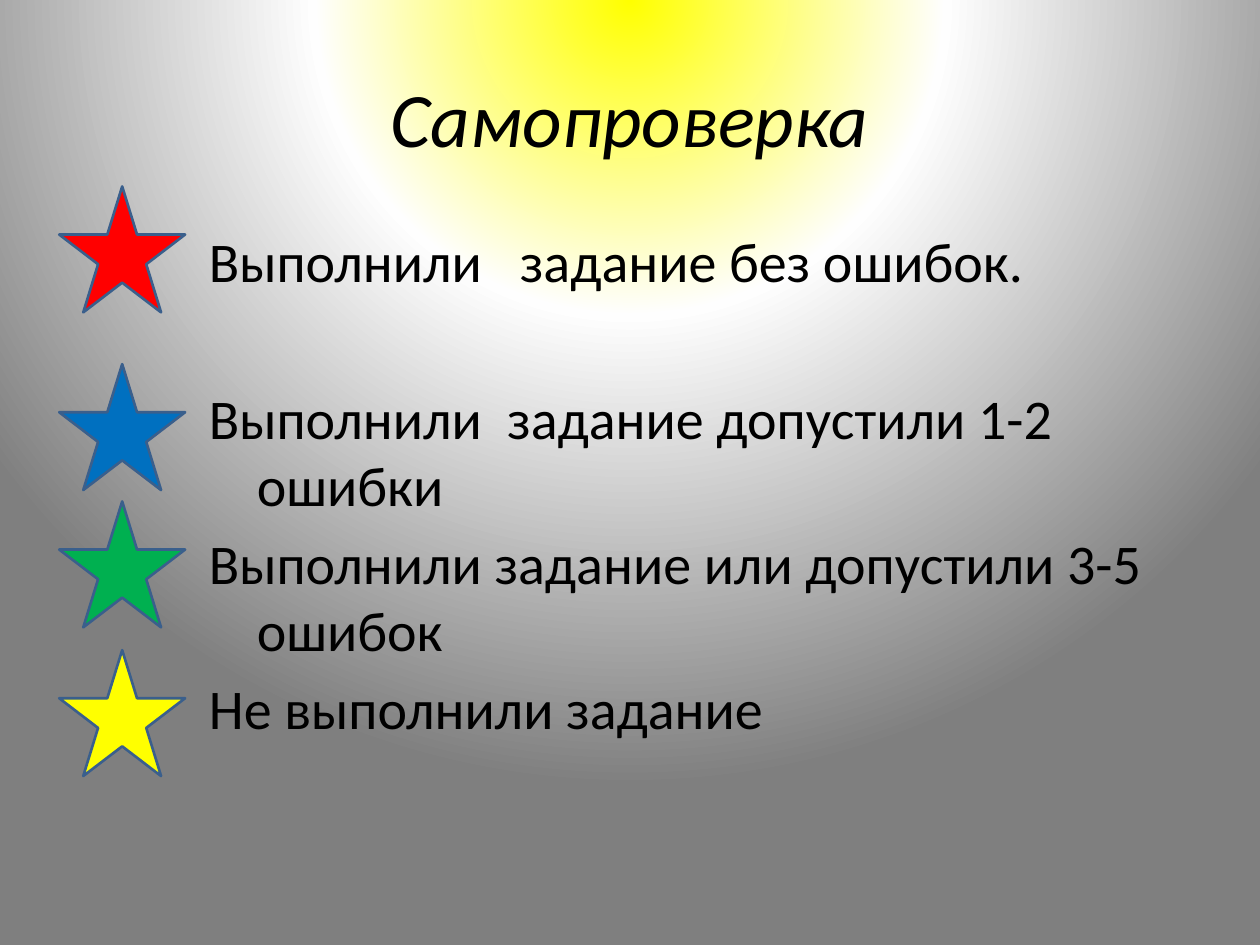
import pptx
import pptx.util
import pptx.dml.color
import pptx.enum.shapes
import pptx.enum.text
import pptx.oxml
import pptx.oxml.ns

W, H = 10, 7.5
FONT = "Calibri"
BODY_SIZE = 32
PARA_GAP = 6
EMPTY_ROW = 45  # one skipped line of body text, in points

# star top, star colour, text, extra space above the text
LEVELS = [
    (1.48, "FF0000", "Выполнили   задание без ошибок.", 0),
    (2.89, "0070C0", "Выполнили  задание допустили 1-2   ошибки", EMPTY_ROW),
    (3.98, "00B050", "Выполнили задание или допустили 3-5 ошибок", 0),
    (5.16, "FFFF00", "Не выполнили задание", 0),
]


def color(hex_text):
    return pptx.dml.color.RGBColor.from_string(hex_text)


def place(sp, box):
    sp.left, sp.top, sp.width, sp.height = map(pptx.util.Inches, box)


def write(p, text, size=BODY_SIZE, fill="000000", italic=False,
          align=pptx.enum.text.PP_ALIGN.LEFT, before=0):
    p.alignment = align
    p.space_before = pptx.util.Pt(before)
    r = p.add_run()
    r.text = text
    r.font.name = FONT
    r.font.size = pptx.util.Pt(size)
    r.font.italic = italic
    r.font.color.rgb = color(fill)


def add_background(s):
    """Circular gradient centred above the top edge."""
    stops = [(0, "FFFF00"), (40, "FEFEFE"), (100, "7F7F7F")]
    gs = "".join(f'<a:gs pos="{pos * 1000}"><a:srgbClr val="{c}"/></a:gs>'
                 for pos, c in stops)
    bg = pptx.oxml.parse_xml(
        f'<p:bg {pptx.oxml.ns.nsdecls("p", "a")}><p:bgPr>'
        f'<a:gradFill rotWithShape="1"><a:gsLst>{gs}</a:gsLst>'
        '<a:path path="circle"><a:fillToRect l="50000" t="-80000" '
        'r="50000" b="180000"/></a:path></a:gradFill>'
        '<a:effectLst/></p:bgPr></p:bg>')
    s.element.cSld.insert(0, bg)


def add_title(s, box, text):
    sp = s.shapes.title
    place(sp, box)
    tf = sp.text_frame
    tf.vertical_anchor = pptx.enum.text.MSO_ANCHOR.MIDDLE
    write(tf.paragraphs[0], text, size=44, italic=True,
          align=pptx.enum.text.PP_ALIGN.CENTER)


def add_criteria(s, box):
    """Hanging paragraphs, one for each level."""
    sp = s.shapes.add_textbox(*map(pptx.util.Inches, box))
    tf = sp.text_frame
    tf.word_wrap = True
    indent = pptx.util.Inches(0.38)
    for i, (_, _, text, extra) in enumerate(LEVELS):
        p = tf.add_paragraph() if i else tf.paragraphs[0]
        write(p, text, before=PARA_GAP + extra)
        pPr = p._p.get_or_add_pPr()
        pPr.set("marL", str(indent))
        pPr.set("indent", str(-indent))


def add_stars(s, left, size):
    for top, fill, _, _ in LEVELS:
        sp = s.shapes.add_shape(pptx.enum.shapes.MSO_SHAPE.STAR_5_POINT,
                                *map(pptx.util.Inches, (left, top, size, size)))
        sp.shadow.inherit = False
        sp.fill.solid()
        sp.fill.fore_color.rgb = color(fill)
        sp.line.color.rgb = color("3A5F8C")
        sp.line.width = pptx.util.Pt(1.5)


def main():
    prs = pptx.Presentation()
    prs.slide_width = pptx.util.Inches(W)
    prs.slide_height = pptx.util.Inches(H)
    s = prs.slides.add_slide(prs.slide_layouts[5])
    add_background(s)
    add_title(s, (0.05 * W, 0.04 * H, 0.9 * W, H / 6), "Самопроверка")
    text_left = 0.156 * W
    add_criteria(s, (text_left, 1.75, W - text_left, 0.66 * H))
    add_stars(s, 0.047 * W, 0.1 * W)
    prs.save("out.pptx")


if __name__ == "__main__":
    main()
